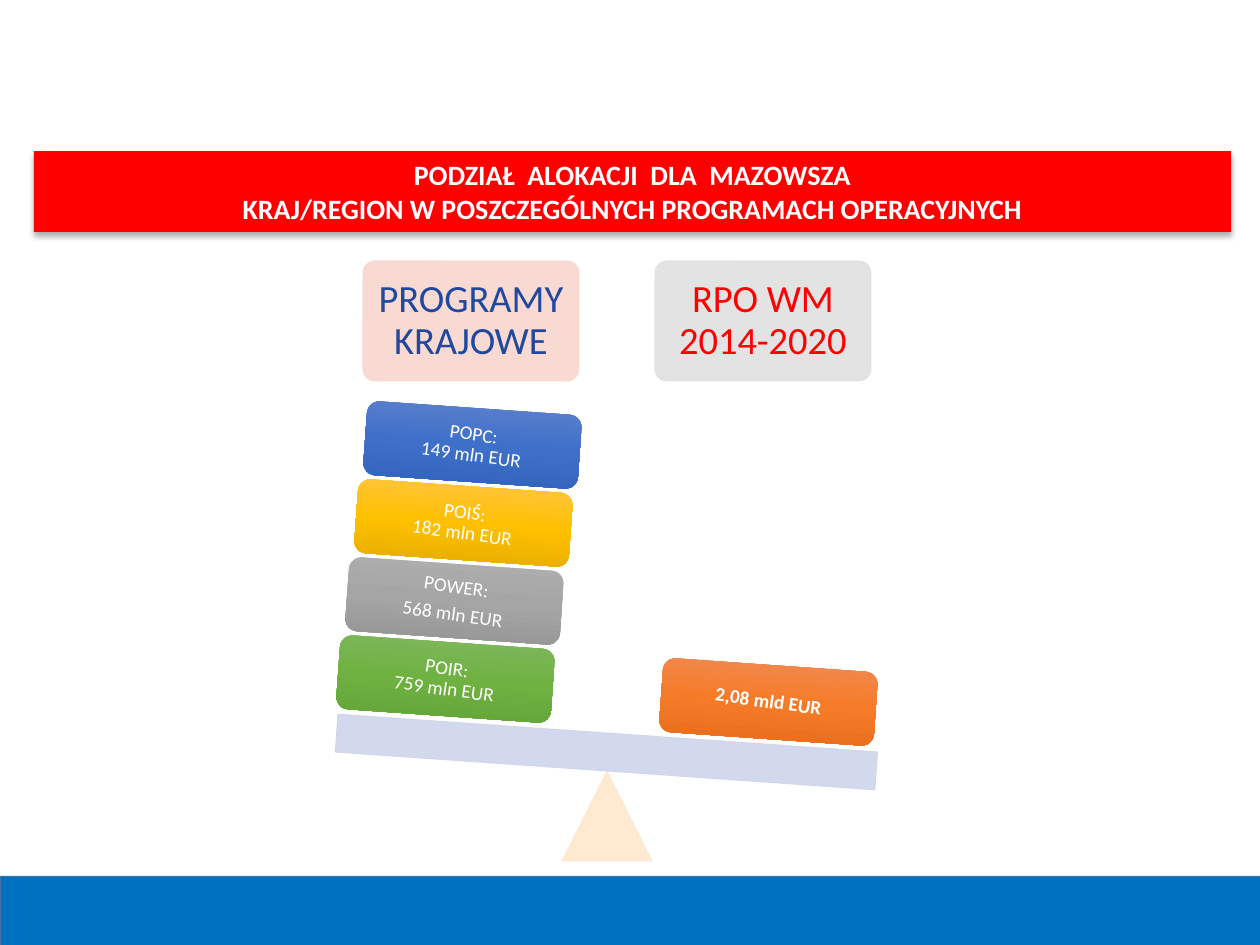
from copy import deepcopy
from lxml import etree
from pptx import Presentation
from pptx.dml.color import RGBColor
from pptx.enum.shapes import MSO_SHAPE
from pptx.enum.text import MSO_ANCHOR, PP_ALIGN
from pptx.oxml.ns import qn
from pptx.util import Emu, Pt

PX = 914400 / 126
TILT = 4
COLORS = {
    "white": "FFFFFF", "red": "FF0000", "navy": "21489F",
    "bar": "0070C0", "edge": "43739E", "shadow": "000000",
    "rose": "F8D7CE", "mist": "E1E1E1", "cream": "FFE8CC", "beam": "CFD5EA",
}
GRADS = {
    "blue": ("6183CB", "3E70CA", "3062BB"),
    "gold": ("FFC64B", "FFC000", "E3AB00"),
    "grey": ("AFAFAF", "A5A5A5", "939393"),
    "green": ("81B861", "6FB242", "62A336"),
    "orange": ("F18C57", "F67B28", "E56C19"),
}

deck = Presentation()
deck.slide_width, deck.slide_height = Emu(round(1260 * PX)), Emu(round(945 * PX))
slide = deck.slides.add_slide(deck.slide_layouts[6])


def draw(kind, box, color, line=None, width=0.5, alpha=None):
    """Add a flat shape; alpha is the opacity in percent of fill and line."""
    shape = slide.shapes.add_shape(kind, *(Emu(round(v * PX)) for v in box))
    shape.shadow.inherit = False
    shape.fill.solid()
    shape.fill.fore_color.rgb = RGBColor.from_string(COLORS[color])
    if line:
        shape.line.color.rgb = RGBColor.from_string(COLORS[line])
        shape.line.width = Pt(width)
    else:
        shape.line.fill.background()
    if alpha:
        for tone in shape._element.spPr.iter(qn("a:srgbClr")):
            etree.SubElement(tone, qn("a:alpha")).set("val", str(alpha * 1000))
    return shape


def write(shape, text, size, color, bold=False, inset=6, space=0.9):
    frame = shape.text_frame
    frame.word_wrap = True
    frame.vertical_anchor = MSO_ANCHOR.MIDDLE
    frame.margin_left = frame.margin_right = Emu(round(inset * PX))
    frame.margin_top = frame.margin_bottom = Emu(round(inset * PX))
    frame.text = text
    for para in frame.paragraphs:
        para.alignment = PP_ALIGN.CENTER
        para.line_spacing = space
        para.space_after = Pt(round(size * 0.35)) if space < 1 else Pt(0)
        for run in para.runs:
            run.font.name = "Calibri"
            run.font.size = Pt(size)
            run.font.bold = bold
            run.font.color.rgb = RGBColor.from_string(COLORS[color])


# Column headings
for left, text, fill, ink in (
    (363, "PROGRAMY KRAJOWE", "rose", "navy"),
    (655, "RPO WM 2014-2020", "mist", "red"),
):
    card = draw(MSO_SHAPE.ROUNDED_RECTANGLE, (left, 261, 216, 120), fill, fill, alpha=90)
    card.adjustments[0] = 0.1
    write(card, text, 22, ink, inset=11)

# Scale
draw(MSO_SHAPE.ISOSCELES_TRIANGLE, (562, 771, 90, 90), "cream", "cream", alpha=90)
beam = draw(MSO_SHAPE.RECTANGLE, (336, 733, 541, 38), "beam", "beam", alpha=90)
beam.rotation = TILT

# Weights: the left stack leans with the beam
stack = (
    ("POPC:\v149 mln EUR", "blue"),
    ("POIŚ:\v182 mln EUR", "gold"),
    ("POWER:\n568 mln EUR", "grey"),
    ("POIR:\v759 mln EUR", "green"),
)
weights = [(365 - 9 * i, 408 + 78 * i, text, tone, False)
           for i, (text, tone) in enumerate(stack)]
weights.append((661, 665, "2,08 mld EUR", "orange", True))
for left, top, text, tone, bold in weights:
    box = (left, top, 215, 74)
    block = draw(MSO_SHAPE.ROUNDED_RECTANGLE, box, "white")
    block.rotation = TILT
    block.fill.gradient()
    block.fill.gradient_angle = 270
    stops = block._element.spPr.find(qn("a:gradFill")).find(qn("a:gsLst"))
    stops.insert(1, deepcopy(stops[0]))
    stops[1].set("pos", "50000")
    for stop, code in zip(block.fill.gradient_stops, GRADS[tone]):
        stop.color.rgb = RGBColor.from_string(code)
    # The label tilts twice as far as its block
    label = slide.shapes.add_textbox(*(Emu(round(v * PX)) for v in box))
    label.rotation = 2 * TILT
    write(label, text, 11, "white", bold)

# Footer and title banner
draw(MSO_SHAPE.RECTANGLE, (0, 876, 1260, 69), "bar", "edge", 0.25)
banner = draw(MSO_SHAPE.RECTANGLE, (34, 151, 1197, 81), "red")
title = ("PODZIAŁ  ALOKACJI  DLA  MAZOWSZA\v"
         "KRAJ/REGION W POSZCZEGÓLNYCH PROGRAMACH OPERACYJNYCH")
write(banner, title, 16, "white", True, space=1.0)
effects = banner._element.spPr.find(qn("a:effectLst"))
shade = etree.SubElement(effects, qn("a:outerShdw"), blurRad=str(Pt(3.5)),
                         dist=str(Pt(2.2)), dir="5400000", rotWithShape="0")
tint = etree.SubElement(shade, qn("a:srgbClr"), val=COLORS["shadow"])
etree.SubElement(tint, qn("a:alpha"), val="32000")

deck.save("out.pptx")
